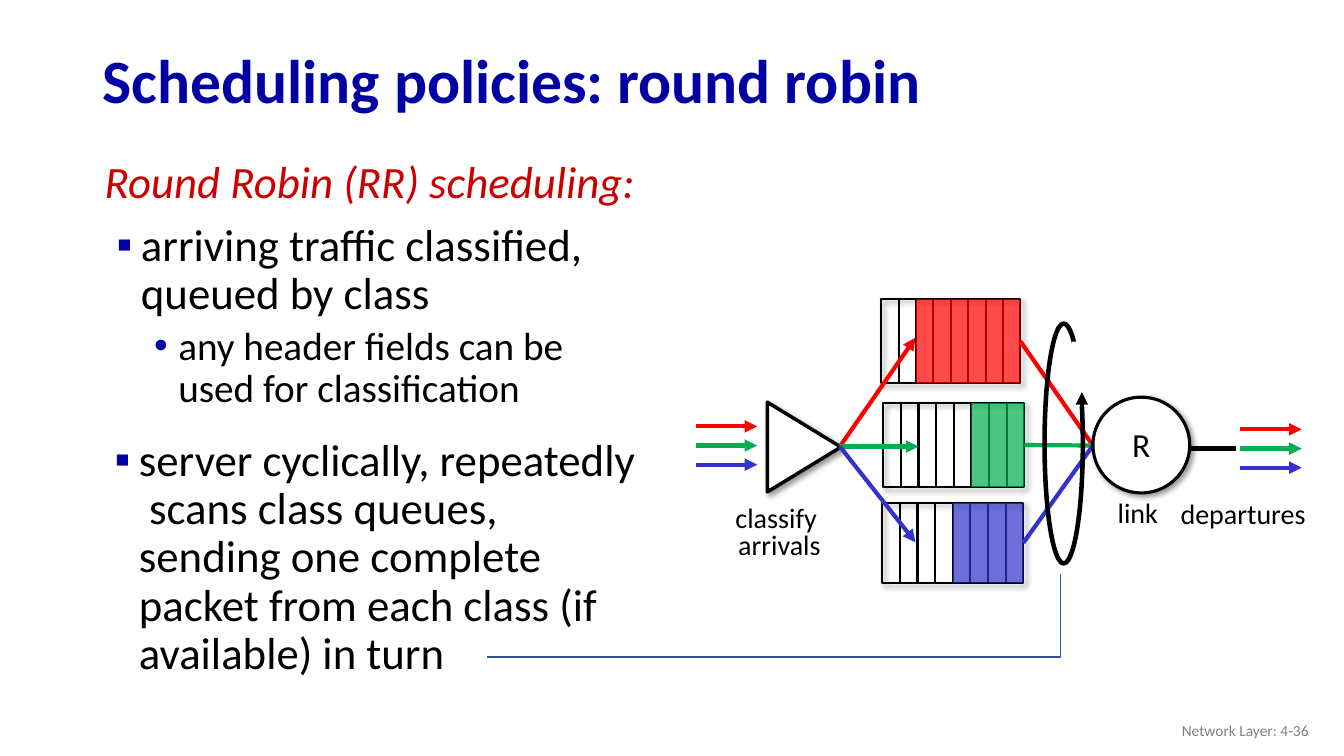
from lxml.etree import SubElement
from pptx import Presentation
from pptx.dml.color import RGBColor
from pptx.enum.shapes import MSO_CONNECTOR, MSO_SHAPE
from pptx.enum.text import MSO_ANCHOR, PP_ALIGN
from pptx.oxml.ns import qn
from pptx.util import Emu, Inches, Pt

BLACK, WHITE, NAVY = "000000", "FFFFFF", "0000A3"
CLASS_COLORS = RED, GREEN, BLUE = "FF0000", "00B050", "3333CC"
FONT = "Calibri"
CELLS = 8


def rgb(color):
    return RGBColor.from_string(color)


def add_run(paragraph, text, size, color, bold=False, italic=False):
    run = paragraph.add_run()
    run.text = text
    run.font.name = FONT
    run.font.size = Pt(size)
    run.font.bold = bold
    run.font.italic = italic
    run.font.color.rgb = rgb(color)


def add_text_box(slide, left, top, width, height, wrap=True):
    box = slide.shapes.add_textbox(Inches(left), Inches(top), Inches(width), Inches(height))
    box.text_frame.word_wrap = wrap
    return box.text_frame


def add_label(slide, left, top, width, height, lines, size=20):
    frame = add_text_box(slide, left, top, width, height, wrap=False)
    for number, line in enumerate(lines):
        paragraph = frame.add_paragraph() if number else frame.paragraphs[0]
        paragraph.alignment = PP_ALIGN.CENTER
        paragraph.line_spacing = 0.8
        add_run(paragraph, line, size, BLACK)


def format_body(paragraph, indent, before, bullet=None, bullet_color=NAVY):
    paragraph.line_spacing = 0.9
    paragraph.space_before = Pt(before)
    properties = paragraph._p.get_or_add_pPr()
    properties.set("marL", str(Inches(indent)))
    properties.set("indent", str(Inches(-0.24)))
    if bullet:
        color = SubElement(properties, qn("a:buClr"))
        SubElement(color, qn("a:srgbClr"), val=bullet_color)
        SubElement(properties, qn("a:buFont"), typeface="Arial")
        SubElement(properties, qn("a:buChar"), char=bullet)


def add_drop_shadow(shape):
    effects = shape._element.spPr.find(qn("a:effectLst"))
    shadow = SubElement(effects, qn("a:outerShdw"), blurRad=str(Pt(4)), dist=str(Pt(3)),
                        dir=str(45 * 60000), algn="tl", rotWithShape="0")
    color = SubElement(shadow, qn("a:srgbClr"), val=BLACK)
    SubElement(color, qn("a:alpha"), val="40000")


def style_shape(shape, fill=None, line=None, weight=1.0, opacity=None, shadow=False):
    shape.shadow.inherit = False
    if fill:
        shape.fill.solid()
        shape.fill.fore_color.rgb = rgb(fill)
    else:
        shape.fill.background()
    if opacity:
        color = shape._element.spPr.find(qn("a:solidFill")).find(qn("a:srgbClr"))
        SubElement(color, qn("a:alpha"), val=str(opacity * 1000))
    if line:
        shape.line.color.rgb = rgb(line)
        shape.line.width = Pt(weight)
    else:
        shape.line.fill.background()
    if shadow:
        add_drop_shadow(shape)


def add_shape(slide, kind, left, top, width, height, **style):
    shape = slide.shapes.add_shape(kind, Inches(left), Inches(top), Inches(width), Inches(height))
    style_shape(shape, **style)
    return shape


def add_line(slide, start, end, color=BLACK, weight=3.0, arrow=False):
    connector = slide.shapes.add_connector(
        MSO_CONNECTOR.STRAIGHT, *(Inches(value) for value in (*start, *end)))
    connector.line.color.rgb = rgb(color)
    connector.line.width = Pt(weight)
    if arrow:
        SubElement(connector.line._get_or_add_ln(), qn("a:tailEnd"), type="triangle")
    SubElement(connector._element.spPr, qn("a:effectLst"))
    return connector


def add_queue(slide, left, top, width, height, color, waiting):
    """Draw a queue of equal cells whose last `waiting` cells are filled."""
    queue = add_shape(slide, MSO_SHAPE.RECTANGLE, left, top, width, height,
                      line=BLACK, weight=1.5, shadow=True)
    cell = width / CELLS
    for number in range(1, CELLS):
        x = left + number * cell
        add_line(slide, (x, top), (x, top + height), weight=1.5)
    add_shape(slide, MSO_SHAPE.RECTANGLE, left + width - waiting * cell, top,
              waiting * cell, height, fill=color, opacity=71)
    return queue


def add_packet_arrows(slide, left, top):
    for number, color in enumerate(CLASS_COLORS):
        y = top + number * 0.19
        add_line(slide, (left, y), (left + 0.61, y), color, arrow=True)


def add_title(slide):
    title = slide.shapes.title
    title.left, title.top, title.width, title.height = (
        Inches(value) for value in (0.92, 0.34, 11.5, 0.98))
    title.text_frame.vertical_anchor = MSO_ANCHOR.MIDDLE
    paragraph = title.text_frame.paragraphs[0]
    paragraph.alignment = PP_ALIGN.LEFT
    paragraph.line_spacing = 0.9
    add_run(paragraph, "Scheduling policies: round robin", 44, NAVY, bold=True)


def add_body(slide):
    frame = add_text_box(slide, 0.79, 1.54, 5.64, 2.75)
    heading = frame.paragraphs[0]
    format_body(heading, 0.39, 10)
    add_run(heading, "Round Robin (RR) scheduling:", 32, "CC0000", italic=True)
    arriving = frame.add_paragraph()
    format_body(arriving, 0.51, 10, "▪")
    add_run(arriving, "arriving traffic classified, queued by class", 32, BLACK)
    fields = frame.add_paragraph()
    fields.level = 1
    format_body(fields, 0.88, 5, "•", "0000A8")
    add_run(fields, "any header fields can be used for classification", 28, BLACK)

    server = add_text_box(slide, 0.77, 4.29, 5.64, 2.57).paragraphs[0]
    format_body(server, 0.51, 10, "▪")
    add_run(server, "server cyclically, repeatedly  scans class queues, sending one complete "
            "packet from each class (if available) in turn", 32, BLACK)


def add_diagram(slide):
    add_line(slide, (11.76, 4.45), (12.26, 4.45))
    queues = [
        add_queue(slide, 8.74, 2.97, 1.38, 0.83, RED, 6),
        add_queue(slide, 8.76, 4, 1.4, 0.83, GREEN, 3),
        add_queue(slide, 8.75, 4.99, 1.4, 0.79, BLUE, 4),
    ]
    classifier = add_shape(slide, MSO_SHAPE.ISOSCELES_TRIANGLE, 7.53, 4.07, 0.89, 0.73,
                           fill=WHITE, line=BLACK, weight=2.5, shadow=True)
    classifier.rotation = 90
    add_packet_arrows(slide, 6.9, 4.23)
    add_packet_arrows(slide, 12.3, 4.26)
    add_label(slide, 7.19, 4.98, 1.08, 0.65, ["classify ", "arrivals"])
    add_label(slide, 11.6, 4.94, 1.46, 0.38, ["departures"])

    for color, end in zip(CLASS_COLORS, [(9.08, 3.35), (9.11, 4.43), (9.08, 5.38)]):
        add_line(slide, (8.33, 4.43), end, color, arrow=True)
    for color, queue in zip(CLASS_COLORS, queues):
        to_link = add_line(slide, (10.15, 4.42), (10.84, 4.42), color)
        to_link.begin_connect(queue, 3)

    add_shape(slide, MSO_SHAPE.OVAL, 10.84, 3.94, 0.96, 0.95,
              fill=WHITE, line=BLACK, weight=2.25, shadow=True)
    add_label(slide, 10.98, 4.93, 0.61, 0.38, ["link"])
    add_label(slide, 11.13, 4.23, 0.38, 0.43, ["R"], size=24)


def add_cycle(slide):
    """Draw the open loop around the queue outputs and its leader to the text."""
    add_shape(slide, MSO_SHAPE.OVAL, 10.36, 3.21, 0.38, 2.38, line=BLACK, weight=3.25)
    add_shape(slide, MSO_SHAPE.RECTANGLE, 10.63, 3.39, 0.21, 0.64, fill=WHITE)
    add_line(slide, (10.73, 4.18), (10.73, 3.89), arrow=True)
    builder = slide.shapes.build_freeform(Inches(4.83), Inches(6.52))
    builder.add_line_segments([(Inches(10.52), Inches(6.52)), (Inches(10.52), Inches(5.69))],
                              close=False)
    style_shape(builder.convert_to_shape(Emu(0), Emu(0)), line="325491")


def add_footer(slide):
    frame = add_text_box(slide, 10.08, 7.05, 3, 0.4)
    frame.vertical_anchor = MSO_ANCHOR.MIDDLE
    paragraph = frame.paragraphs[0]
    paragraph.alignment = PP_ALIGN.RIGHT
    add_run(paragraph, "Network Layer: 4-36", 11, "808080")


def main():
    presentation = Presentation()
    presentation.slide_width = Inches(13.33)
    presentation.slide_height = Inches(7.5)
    slide = presentation.slides.add_slide(presentation.slide_layouts[5])
    add_title(slide)
    add_diagram(slide)
    add_cycle(slide)
    add_body(slide)
    add_footer(slide)
    presentation.save("out.pptx")


if __name__ == "__main__":
    main()
